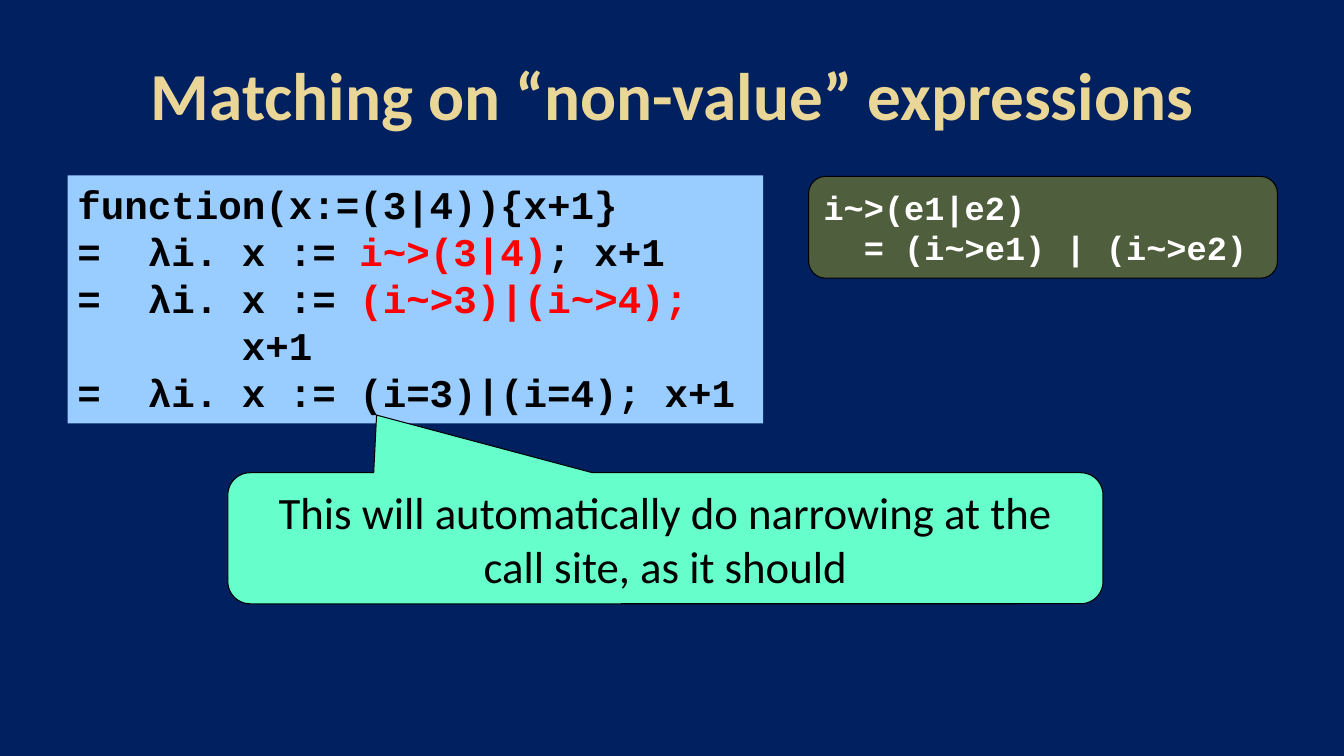
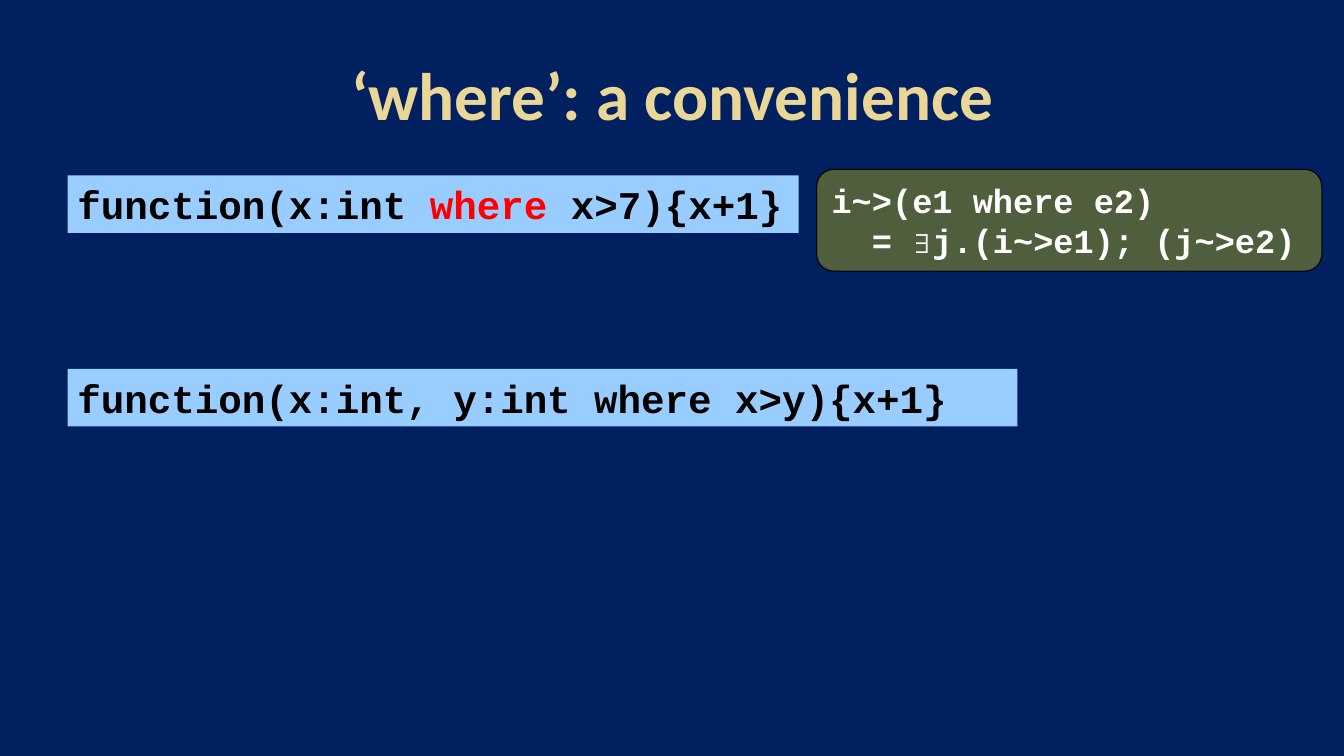
from pptx import Presentation
from pptx.dml.color import RGBColor
from pptx.enum.shapes import MSO_SHAPE as Preset
from pptx.enum.text import MSO_ANCHOR as Anchor, MSO_AUTO_SIZE as AutoSize, PP_ALIGN as Align
from pptx.util import Inches, Pt

NAVY = RGBColor(0x00, 0x20, 0x60)
GOLD = RGBColor(0xEA, 0xD6, 0x96)
SKY = RGBColor(0x99, 0xCC, 0xFF)
OLIVE = RGBColor(0x4F, 0x5E, 0x3C)
MINT = RGBColor(0x66, 0xFF, 0xCC)
RED = RGBColor(0xFF, 0x00, 0x00)
BLACK = RGBColor(0x00, 0x00, 0x00)
WHITE = RGBColor(0xFF, 0xFF, 0xFF)

PROSE = "Calibri"
CODE = "Courier New"
MARGIN = 0.67
BREAK = "\n"


def red(text):
    return text, RED


def write(frame, *lines, font=PROSE, size=32, color=BLACK, bold=False,
          align=Align.LEFT, anchor=Anchor.MIDDLE):
    frame.word_wrap = True
    frame.vertical_anchor = anchor
    for index, line in enumerate(lines):
        paragraph = frame.add_paragraph() if index else frame.paragraphs[0]
        paragraph.alignment = align
        for part in [line] if isinstance(line, str) else line:
            if part == BREAK:
                paragraph.add_line_break()
                continue
            text, shade = (part, color) if isinstance(part, str) else part
            run = paragraph.add_run()
            run.text = text
            run.font.name = font
            run.font.size = Pt(size)
            run.font.bold = bold
            run.font.color.rgb = shade


def add_panel(slide, preset, box, fill, outlined=True):
    panel = slide.shapes.add_shape(preset, *map(Inches, box))
    panel.shadow.inherit = False
    panel.fill.solid()
    panel.fill.fore_color.rgb = fill
    if outlined:
        panel.line.color.rgb = BLACK
        panel.line.width = Pt(0.75)
    else:
        panel.line.fill.background()
    panel.text_frame.auto_size = AutoSize.SHAPE_TO_FIT_TEXT
    return panel


def add_code(slide, box, *lines):
    code = add_panel(slide, Preset.RECTANGLE, box, SKY, outlined=False)
    write(code.text_frame, *lines, font=CODE, size=28, bold=True, anchor=Anchor.TOP)


def add_rule(slide, box, *lines):
    rule = add_panel(slide, Preset.ROUNDED_RECTANGLE, box, OLIVE)
    write(rule.text_frame, *lines, font=CODE, size=24, color=WHITE, bold=True)


def add_callout(slide, box, pointer, text):
    callout = add_panel(slide, Preset.ROUNDED_RECTANGULAR_CALLOUT, box, MINT)
    for index, value in enumerate(pointer):
        callout.adjustments[index] = value
    write(callout.text_frame, text, align=Align.CENTER)


def set_theme(prs, layout):
    prs.slide_width, prs.slide_height = Inches(13.33), Inches(7.5)
    background = prs.slide_master.background.fill
    background.solid()
    background.fore_color.rgb = NAVY
    title = layout.placeholders[0]
    title.left, title.top = Inches(MARGIN), Inches(0.3)
    title.width, title.height = Inches(12), Inches(1.25)


def add_titled_slide(prs, layout, title):
    slide = prs.slides.add_slide(layout)
    write(slide.shapes.title.text_frame, title, size=48, color=GOLD, bold=True,
          align=Align.CENTER)
    return slide


def build_matching(prs, layout):
    slide = add_titled_slide(prs, layout, "Matching on “non-value” expressions")
    add_code(
        slide, (MARGIN, 1.74, 6.9, 2.46),
        "function(x:=(3|4)){x+1}",
        ["=  λi. x := ", red("i~>(3|4)"), "; x+1"],
        ["=  λi. x := ", red("(i~>3)|(i~>4);"), BREAK, "       x+1"],
        "=  λi. x := (i=3)|(i=4); x+1",
    )
    add_rule(slide, (8.02, 1.75, 4.65, 1.01), "i~>(e1|e2)", "  = (i~>e1) | (i~>e2)")
    add_callout(slide, (2.26, 4.69, 8.68, 1.3), (-0.33, -0.94, 0.17),
                "This will automatically do narrowing at the call site, as it should")


def build_where(prs, layout):
    slide = add_titled_slide(prs, layout, "‘where’: a convenience")
    add_code(slide, (MARGIN, 1.74, 7.25, 0.57),
             ["function(x:int ", red("where"), " x>7){x+1}"])
    add_rule(slide, (8.1, 1.68, 5.01, 1.01), "i~>(e1 where e2)", "  = ∃j.(i~>e1); (j~>e2)")
    add_code(slide, (MARGIN, 3.66, 9.42, 0.57), "function(x:int, y:int where x>y){x+1}")


def main():
    prs = Presentation()
    layout = prs.slide_layouts.get_by_name("Title Only")
    set_theme(prs, layout)
    build_matching(prs, layout)
    build_where(prs, layout)
    prs.save("out.pptx")


if __name__ == "__main__":
    main()
